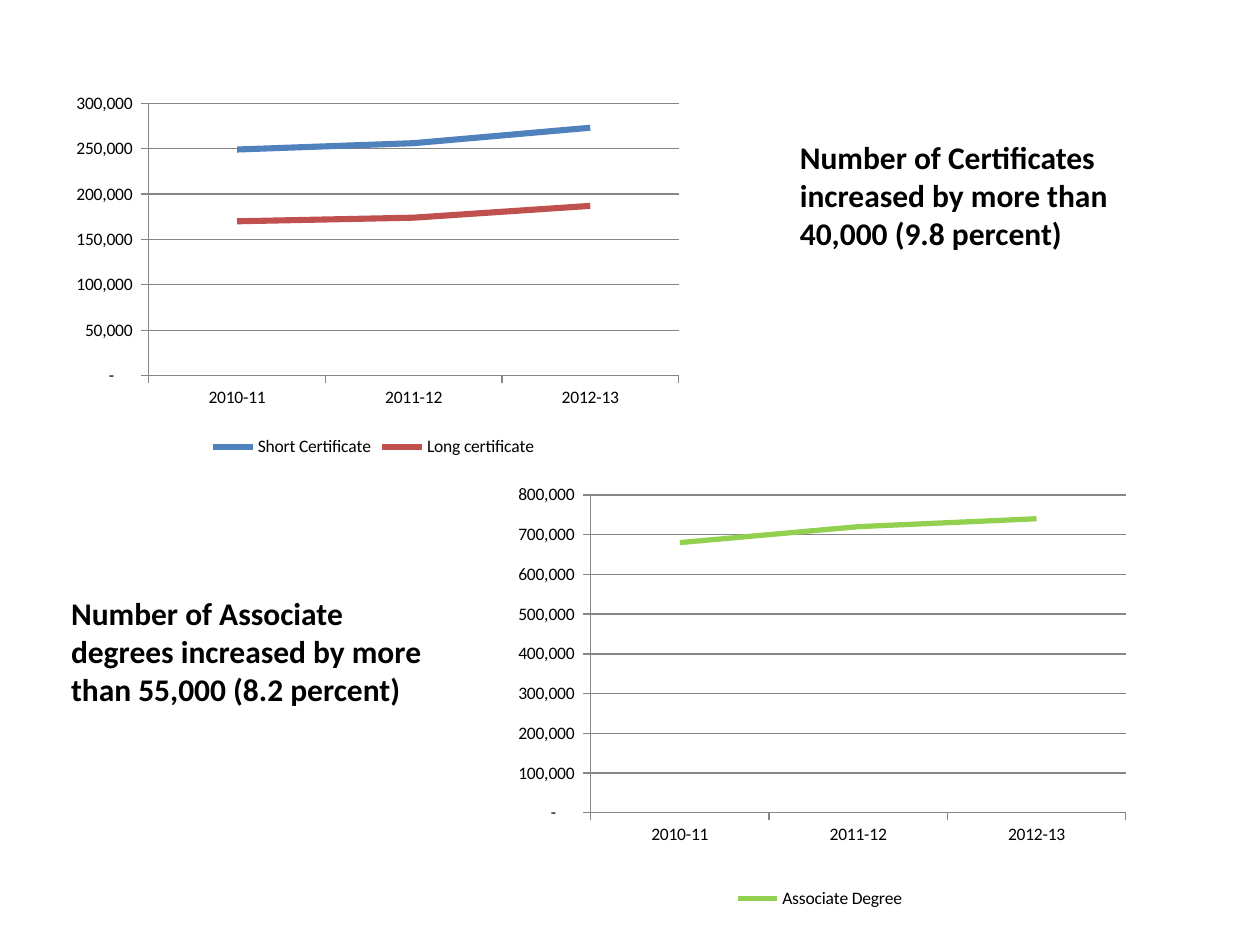
from lxml.etree import SubElement
from pptx import Presentation
from pptx.chart.data import CategoryChartData
from pptx.dml.color import RGBColor
from pptx.enum.chart import XL_CHART_TYPE, XL_LEGEND_POSITION, XL_TICK_MARK
from pptx.enum.text import MSO_AUTO_SIZE
from pptx.oxml.ns import qn
from pptx.util import Pt

BLACK = RGBColor(0x00, 0x00, 0x00)
GRAY = RGBColor(0x86, 0x86, 0x86)
BLUE = RGBColor(0x4F, 0x81, 0xBD)
RED = RGBColor(0xC0, 0x50, 0x4D)
GREEN = RGBColor(0x92, 0xD0, 0x50)
FONT = "Calibri"
NUMBER_FORMAT = '_(* #,##0_);_(* \\(#,##0\\);_(* "-"??_);_('

YEARS = ["2010-11", "2011-12", "2012-13"]
CHARTS = [
    {
        "place": (282.5, 270, 372, 252),
        "plot": (0.148, 0.051, 0.822, 0.721),
        "maximum": 800000,
        "step": 100000,
        "width": 3,
        "series": [("Associate Degree", (680000, 720000, 740000), GREEN)],
    },
    {
        "place": (30, 48, 367, 216),
        "plot": (0.15, 0.051, 0.825, 0.721),
        "maximum": 300000,
        "step": 50000,
        "width": 3.5,
        "series": [
            ("Short Certificate", (249000, 256000, 273000), BLUE),
            ("Long certificate", (170000, 174000, 187000), RED),
        ],
    },
]
MESSAGES = [
    ((33.5, 336, 225.5, 72.7),
     "Number of Associate degrees increased by more than 55,000 (8.2 percent)"),
    ((450, 75.5, 210, 72.7),
     "Number of Certificates increased by more than 40,000 (9.8 percent)"),
]


def style_line(line, color, width):
    line.color.rgb = color
    line.width = Pt(width)


def set_plot_layout(chart, fractions):
    plot_area = chart.element.find(".//" + qn("c:plotArea"))
    for layout in plot_area.findall(qn("c:layout")):
        plot_area.remove(layout)
    layout = SubElement(plot_area, qn("c:layout"))
    plot_area.insert(0, layout)
    manual = SubElement(layout, qn("c:manualLayout"))
    settings = [("layoutTarget", "inner"), ("xMode", "edge"), ("yMode", "edge")]
    settings += zip("xywh", fractions)
    for name, value in settings:
        SubElement(manual, qn("c:" + name)).set("val", str(value))


def add_line_chart(slide, content):
    data = CategoryChartData(number_format=NUMBER_FORMAT)
    data.categories = YEARS
    for name, values, _ in content["series"]:
        data.add_series(name, values)
    chart = slide.shapes.add_chart(
        XL_CHART_TYPE.LINE, *map(Pt, content["place"]), data).chart
    chart.has_title = False
    chart.font.name = FONT
    chart.font.size = Pt(10)
    chart.font.color.rgb = BLACK
    chart.has_legend = True
    chart.legend.position = XL_LEGEND_POSITION.BOTTOM
    chart.legend.include_in_layout = False
    set_plot_layout(chart, content["plot"])

    for axis in (chart.category_axis, chart.value_axis):
        axis.major_tick_mark = XL_TICK_MARK.OUTSIDE
        axis.minor_tick_mark = XL_TICK_MARK.NONE
        style_line(axis.format.line, GRAY, 0.75)
    value_axis = chart.value_axis
    value_axis.minimum_scale = 0
    value_axis.maximum_scale = content["maximum"]
    value_axis.major_unit = content["step"]
    value_axis.has_major_gridlines = True
    style_line(value_axis.major_gridlines.format.line, GRAY, 0.75)
    value_axis.tick_labels.number_format = NUMBER_FORMAT
    value_axis.tick_labels.number_format_is_linked = False

    plot = chart.plots[0]
    plot.vary_by_categories = False
    for series, (_, _, color) in zip(plot.series, content["series"]):
        series.smooth = False
        style_line(series.format.line, color, content["width"])


def add_message(slide, place, text):
    frame = slide.shapes.add_textbox(*map(Pt, place)).text_frame
    frame.word_wrap = True
    frame.auto_size = MSO_AUTO_SIZE.SHAPE_TO_FIT_TEXT
    paragraph = frame.paragraphs[0]
    paragraph.text = text
    paragraph.font.name = FONT
    paragraph.font.size = Pt(18)
    paragraph.font.bold = True
    paragraph.font.color.rgb = BLACK


def main():
    deck = Presentation()
    deck.slide_width = Pt(720)
    deck.slide_height = Pt(540)
    slide = deck.slides.add_slide(deck.slide_layouts[6])
    for content in CHARTS:
        add_line_chart(slide, content)
    for place, text in MESSAGES:
        add_message(slide, place, text)
    deck.save("out.pptx")


if __name__ == "__main__":
    main()
